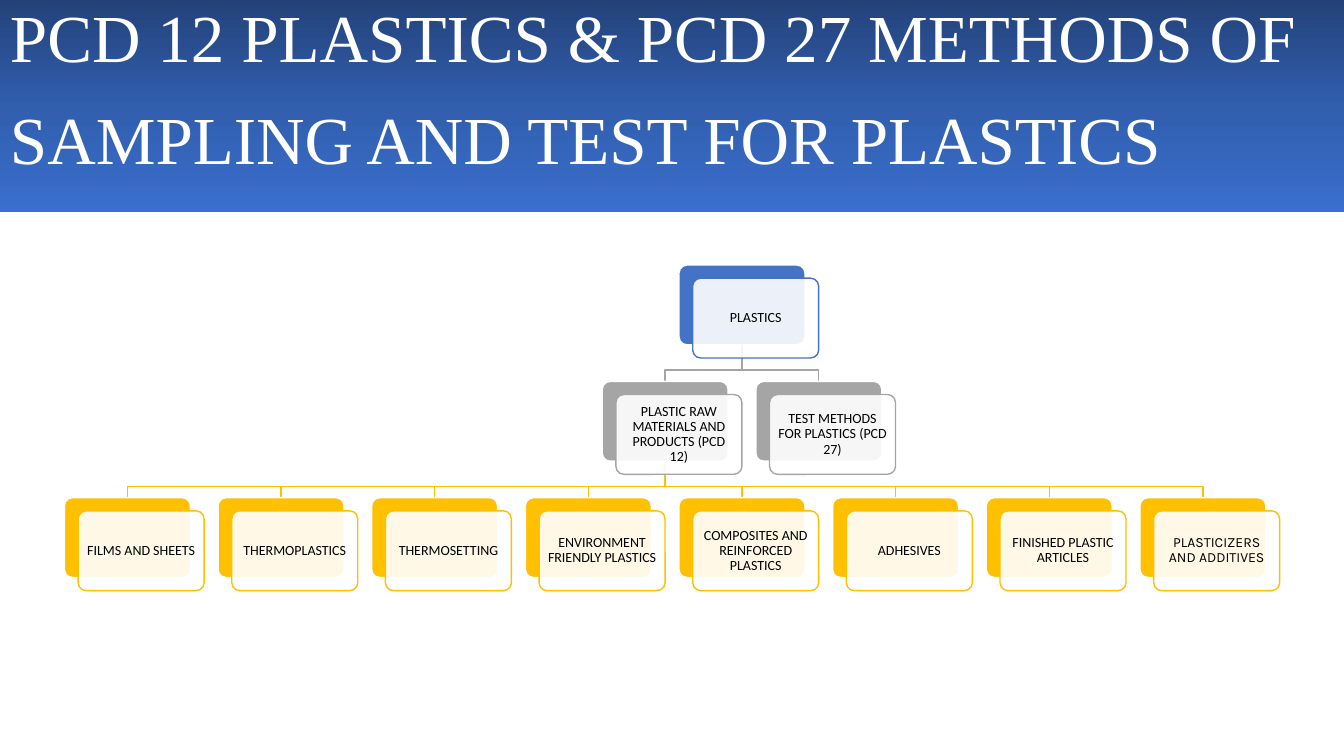
from copy import deepcopy
from dataclasses import dataclass

from lxml import etree
from pptx import Presentation
from pptx.dml.color import RGBColor
from pptx.enum.shapes import MSO_SHAPE
from pptx.enum.text import MSO_ANCHOR, PP_ALIGN
from pptx.oxml.ns import qn
from pptx.util import Pt

RECT, ROUND = MSO_SHAPE.RECTANGLE, MSO_SHAPE.ROUNDED_RECTANGLE
LEFT, CENTER = PP_ALIGN.LEFT, PP_ALIGN.CENTER
TOP, MIDDLE = MSO_ANCHOR.TOP, MSO_ANCHOR.MIDDLE


@dataclass(frozen=True)
class Theme:
    white: str = "FFFFFF"
    black: str = "000000"
    blue: str = "4472C4"
    gray: str = "A5A5A5"
    gold: str = "FFC000"
    banner: tuple = ("23427A", "315EAD", "3A6FCE")
    serif: str = "Times New Roman"
    sans: str = "Calibri"
    alt: str = "Karla"
    title: int = 48
    gap: int = 72
    label: int = 10


THEME = Theme()
WIDTH, HEIGHT = 960, 540
NODE_W, NODE_H = 90, 57
COL_X, COL_STEP = 46, 109.75
ROW_Y, ROW_STEP = 189.3, 83.1
SHIFT_X, SHIFT_Y = 9.8, 9.4
DROP = 18.1

LEAVES = [
    "FILMS AND SHEETS",
    "THERMOPLASTICS",
    "THERMOSETTING",
    "ENVIRONMENT FRIENDLY PLASTICS",
    "COMPOSITES AND REINFORCED PLASTICS",
    "ADHESIVES",
    "FINISHED PLASTIC ARTICLES",
    "PLASTICIZERS AND ADDITIVES",
]


def rgb(color):
    return RGBColor.from_string(color)


def spot(col, row):
    """Top left corner of a node's back plate."""
    return COL_X + col * COL_STEP, ROW_Y + row * ROW_STEP


def add_run(para, text, size, font, color):
    run = para.add_run()
    run.text = text
    run.font.size = Pt(size)
    run.font.name = font
    run.font.color.rgb = rgb(color)


def set_text(shape, runs, align, anchor, color):
    frame = shape.text_frame
    frame.word_wrap = True
    frame.vertical_anchor = anchor
    para = frame.paragraphs[0]
    para.alignment = align
    para.line_spacing = 0.9
    for text, size, font in runs:
        add_run(para, text, size, font, color)


def fill_fade(shape, colors):
    """Fill from top to bottom with evenly spaced colours."""
    fill = shape.fill
    fill.gradient()
    fill.gradient_angle = 270
    stops = shape._element.spPr.find(qn("a:gradFill")).find(qn("a:gsLst"))
    for _ in colors[2:]:
        stops.append(deepcopy(stops[-1]))
    for i, (stop, color) in enumerate(zip(fill.gradient_stops, colors)):
        stop.color.rgb = rgb(color)
        stop.position = i / (len(colors) - 1)


def add_title(slide):
    bar = slide.shapes.add_shape(RECT, 0, 0, Pt(WIDTH), Pt(151.2))
    bar.shadow.inherit = False
    bar.line.fill.background()
    fill_fade(bar, THEME.banner)
    text = "PCD 12 PLASTICS & PCD 27 METHODS OF SAMPLING AND TEST FOR PLASTICS"
    runs = [(text, THEME.title, THEME.serif), (" ", THEME.gap, THEME.serif)]
    set_text(bar, runs, LEFT, TOP, THEME.white)


def add_plate(slide, x, y, fill, line):
    plate = slide.shapes.add_shape(ROUND, Pt(x), Pt(y), Pt(NODE_W), Pt(NODE_H))
    plate.adjustments[0] = 0.1
    plate.shadow.inherit = False
    plate.fill.solid()
    plate.fill.fore_color.rgb = rgb(fill)
    plate.line.color.rgb = rgb(line)
    plate.line.width = Pt(1)
    return plate


def add_node(slide, col, row, text, color, font=THEME.sans):
    """A solid back plate with a translucent labelled card over it."""
    x, y = spot(col, row)
    add_plate(slide, x, y, color, THEME.white)
    card = add_plate(slide, x + SHIFT_X, y + SHIFT_Y, THEME.white, color)
    tint = card._element.spPr.find(qn("a:solidFill"))[0]
    etree.SubElement(tint, qn("a:alpha")).set("val", "90000")
    frame = card.text_frame
    frame.margin_left = frame.margin_right = Pt(4.6)
    frame.margin_top = frame.margin_bottom = Pt(4.6)
    set_text(card, [(text, THEME.label, font)], CENTER, MIDDLE, THEME.black)


def add_link(slide, start, end, row, color):
    """A stepped line from a node in one row to a node in the next."""
    x1, y1 = spot(start, row)
    x2, y2 = spot(end, row + 1)
    x1, x2, y1 = x1 + NODE_W / 2, x2 + NODE_W / 2, y1 + NODE_H
    points = [(x1, y1 + DROP), (x2, y1 + DROP), (x2, y2)]
    path = slide.shapes.build_freeform(Pt(x1), Pt(y1))
    path.add_line_segments([(Pt(x), Pt(y)) for x, y in points], close=False)
    link = path.convert_to_shape()
    link.shadow.inherit = False
    link.fill.background()
    link.line.color.rgb = rgb(color)
    link.line.width = Pt(1)


def main():
    deck = Presentation()
    deck.slide_width, deck.slide_height = Pt(WIDTH), Pt(HEIGHT)
    slide = deck.slides.add_slide(deck.slide_layouts[6])
    add_title(slide)

    root, raw, test = 4, 3.5, 4.5
    add_link(slide, root, test, 0, THEME.gray)
    for col in reversed(range(len(LEAVES))):
        add_link(slide, raw, col, 1, THEME.gold)
    add_link(slide, root, raw, 0, THEME.gray)

    add_node(slide, root, 0, "PLASTICS", THEME.blue)
    add_node(slide, raw, 1, "PLASTIC RAW MATERIALS AND PRODUCTS (PCD 12)", THEME.gray)
    for col, text in enumerate(LEAVES):
        font = THEME.alt if text == LEAVES[-1] else THEME.sans
        add_node(slide, col, 2, text, THEME.gold, font)
    add_node(slide, test, 1, "TEST METHODS FOR PLASTICS (PCD 27)", THEME.gray)

    deck.save("out.pptx")


if __name__ == "__main__":
    main()
